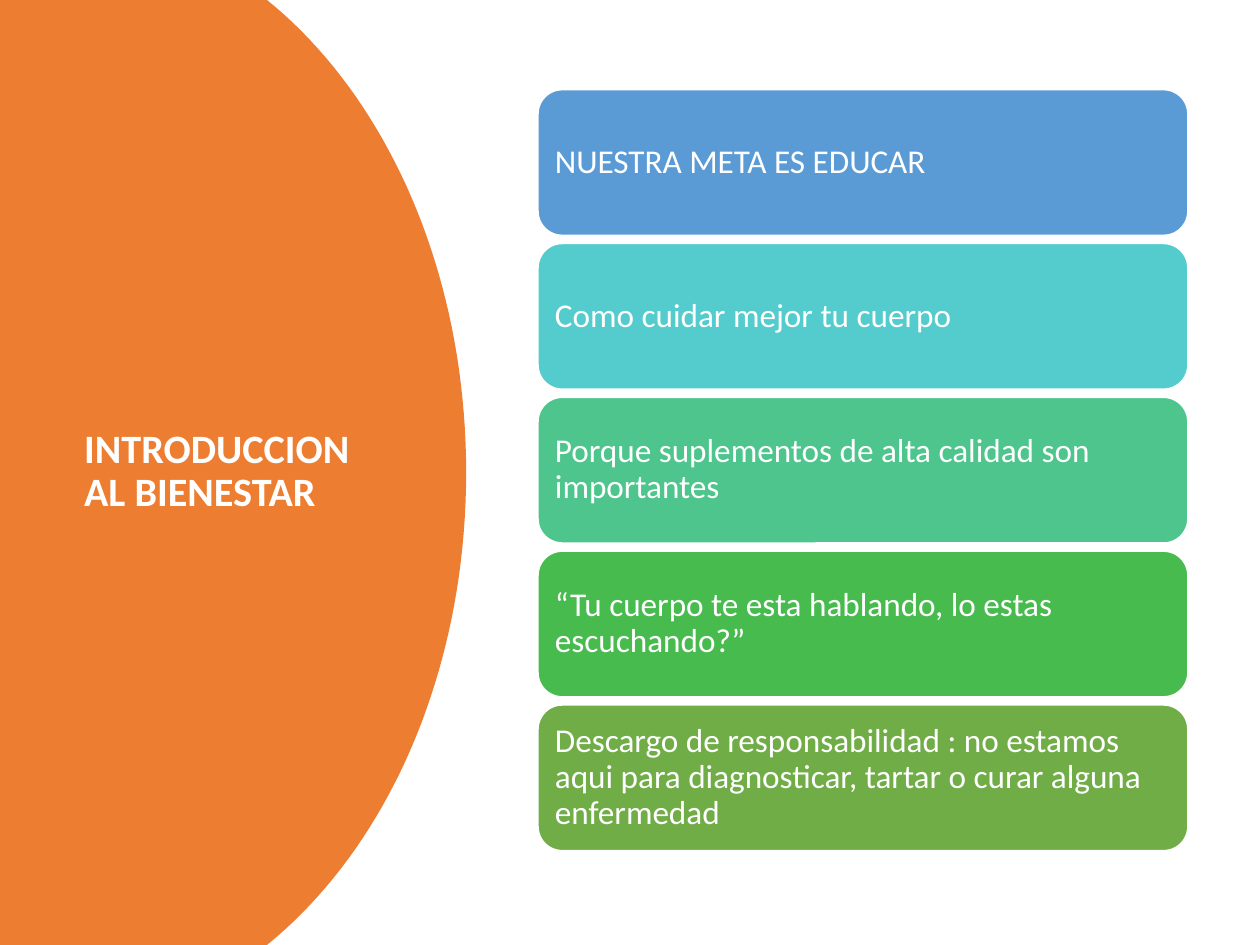
"""Builds the wellness introduction slide."""
import pptx
import pptx.util
import pptx.dml.color
import pptx.enum.shapes
import pptx.enum.text

Pt = pptx.util.Pt

TITLE = "INTRODUCCION AL BIENESTAR"
CARDS = [
    ("NUESTRA META ES EDUCAR", "5B9BD5"),
    ("Como cuidar mejor tu cuerpo", "54CCCD"),
    ("Porque suplementos de alta calidad son importantes", "4DC58D"),
    ("“Tu cuerpo te esta hablando, lo estas escuchando?”", "48BB4F"),
    ("Descargo de responsabilidad : no estamos aqui para diagnosticar, "
     "tartar o curar alguna enfermedad", "70AD47"),
]
WIDE, HIGH = 720, 540
CURVE = [(152.6, 0), (221, 55.4), (266.4, 155.5), (266.4, 270)]
STEPS = 40
LEFT, TOP, CARD_W, CARD_H, PITCH = 307.4, 51.2, 371.5, 83.4, 87.9


def color(code):
    return pptx.dml.color.RGBColor.from_string(code)


def paint(shape, code):
    shape.shadow.inherit = False
    shape.fill.solid()
    shape.fill.fore_color.rgb = color(code)


def write(shape, text, size, inset, bold=False, after=0):
    frame = shape.text_frame
    frame.word_wrap = True
    frame.vertical_anchor = pptx.enum.text.MSO_ANCHOR.MIDDLE
    frame.margin_left = frame.margin_right = Pt(inset[0])
    frame.margin_top = frame.margin_bottom = Pt(inset[1])
    frame.text = text
    para = frame.paragraphs[0]
    para.alignment = pptx.enum.text.PP_ALIGN.LEFT
    para.line_spacing = 0.9
    para.space_after = Pt(after)
    font = para.runs[0].font
    font.name, font.size, font.bold = "Calibri", Pt(size), bold
    font.color.rgb = color("FFFFFF")


def bezier(t):
    parts = ((1 - t) ** 3, 3 * t * (1 - t) ** 2, 3 * t * t * (1 - t), t ** 3)
    return tuple(sum(k * p[axis] for k, p in zip(parts, CURVE)) for axis in (0, 1))


def add_panel(slide):
    upper = [bezier(i / STEPS) for i in range(STEPS + 1)]
    lower = [(x, HIGH - y) for x, y in reversed(upper[:-1])]
    points = [(Pt(x), Pt(y)) for x, y in upper + lower + [(0, HIGH)]]
    pen = slide.shapes.build_freeform(0, 0)
    pen.add_line_segments(points, close=True)
    panel = pen.convert_to_shape()
    paint(panel, "ED7D31")
    panel.line.fill.background()


def add_cards(slide):
    kind = pptx.enum.shapes.MSO_SHAPE.ROUNDED_RECTANGLE
    for row, (text, fill) in enumerate(CARDS):
        card = slide.shapes.add_shape(
            kind, Pt(LEFT), Pt(TOP + row * PITCH), Pt(CARD_W), Pt(CARD_H))
        paint(card, fill)
        card.line.color.rgb = color("FFFFFF")
        card.line.width = Pt(1)
        write(card, text, 19, (5.7, 5.7), after=6.65)


def main():
    deck = pptx.Presentation()
    deck.slide_width, deck.slide_height = Pt(WIDE), Pt(HIGH)
    slide = deck.slides.add_slide(deck.slide_layouts[6])
    add_panel(slide)
    title = slide.shapes.add_textbox(Pt(41), Pt(50.4), Pt(183), Pt(438.5))
    write(title, TITLE, 23, (7.2, 3.6), bold=True)
    add_cards(slide)
    deck.save("out.pptx")


if __name__ == "__main__":
    main()
